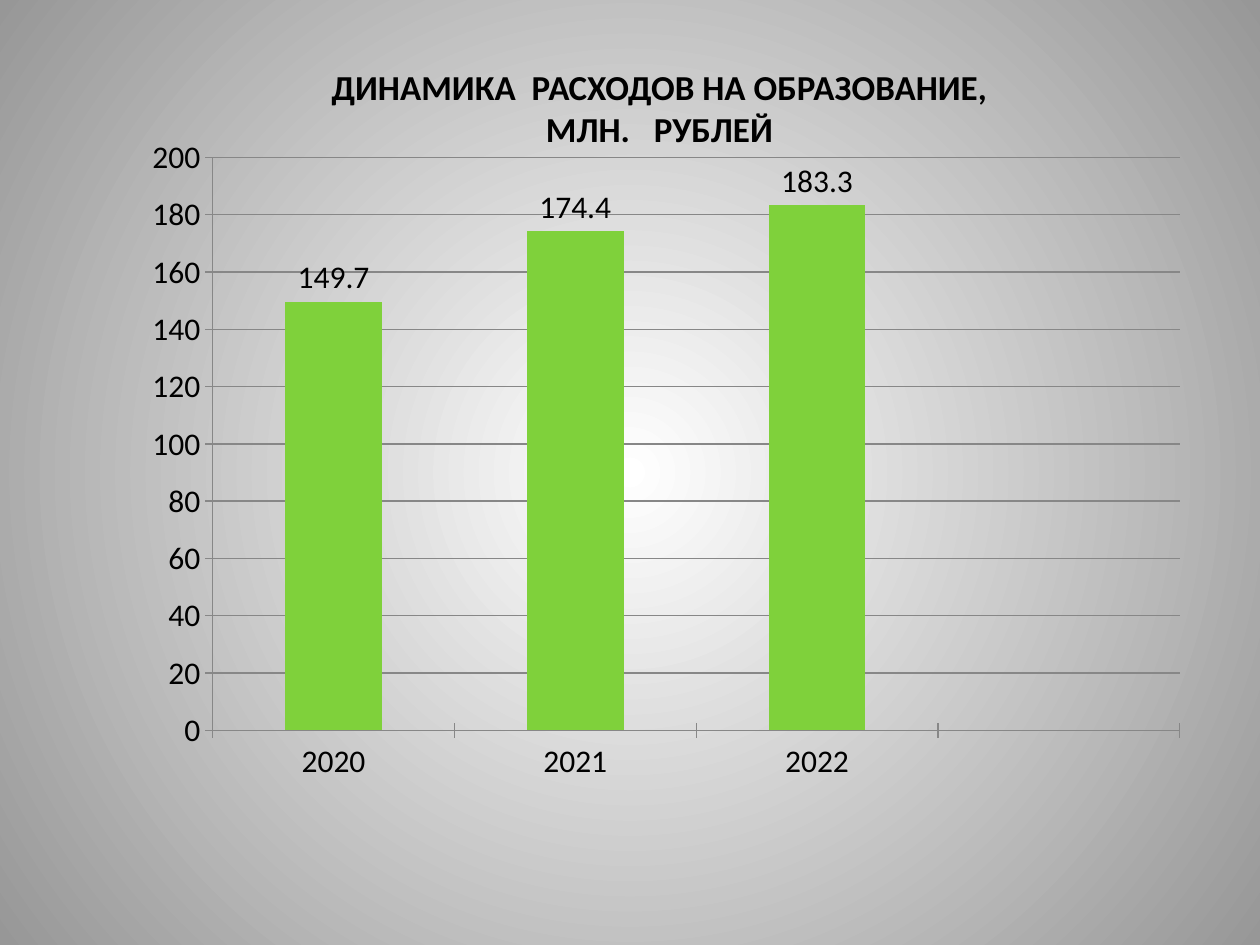
from dataclasses import dataclass

from lxml.etree import SubElement
from pptx import Presentation
from pptx.chart.data import CategoryChartData
from pptx.dml.color import RGBColor
from pptx.enum.chart import XL_CHART_TYPE, XL_LABEL_POSITION, XL_TICK_MARK
from pptx.enum.text import MSO_AUTO_SIZE, PP_ALIGN
from pptx.oxml import parse_xml
from pptx.oxml.ns import nsdecls, qn
from pptx.util import Pt

SCALE = 914400 / 126


@dataclass(frozen=True)
class Theme:
    """Colours and type sizes of the slide."""
    font: str = "Calibri"
    text: str = "000000"
    bar: str = "7FD13B"
    grid: str = "878787"
    centre: str = "FFFFFF"
    edge: str = "979797"
    title_size: int = 20
    chart_size: int = 18


THEME = Theme()


def emu(*lengths):
    """Turn px lengths into EMU."""
    return [round(n * SCALE) for n in lengths]


def apply(obj, values):
    """Set attributes of an object from a dict."""
    for name, value in values.items():
        setattr(obj, name, value)


def style_font(font, size, bold=False):
    """Give a font the theme's face and colour."""
    apply(font, {"name": THEME.font, "size": Pt(size), "bold": bold})
    font.color.rgb = RGBColor.from_string(THEME.text)


def paint_background(s):
    """Fill the slide with a circular gradient around its centre."""
    fill = s.background.fill
    fill.gradient()
    for stop, color, pos in zip(fill.gradient_stops, (THEME.centre, THEME.edge), (0, 1)):
        stop.color.rgb = RGBColor.from_string(color)
        stop.position = pos
    grad = next(s.element.iter(qn("a:gradFill")))
    for lin in grad.findall(qn("a:lin")):
        grad.remove(lin)
    circle = SubElement(grad, qn("a:path"), {"path": "circle"})
    SubElement(circle, qn("a:fillToRect"), dict.fromkeys("ltrb", "50000"))


def set_plot_layout(chart, x, y, w, h):
    """Fix the inner plot area as fractions of the chart."""
    area = next(chart.element.iter(qn("c:plotArea")))
    for old in area.findall(qn("c:layout")):
        area.remove(old)
    modes = '<c:layoutTarget val="inner"/><c:xMode val="edge"/><c:yMode val="edge"/>'
    sizes = "".join(f'<c:{k} val="{v}"/>' for k, v in zip("xywh", (x, y, w, h)))
    area.insert(0, parse_xml(
        f'<c:layout {nsdecls("c")}><c:manualLayout>{modes}{sizes}</c:manualLayout></c:layout>'))


def add_spending_chart(s, box):
    """Draw the yearly spending columns in the box."""
    data = CategoryChartData()
    data.categories = ["2020", "2021", "2022", ""]
    data.add_series("Series 1", [149.7, 174.4, 183.3, None])
    chart = s.shapes.add_chart(XL_CHART_TYPE.COLUMN_CLUSTERED, *emu(*box), data).chart
    apply(chart, {"has_legend": False, "has_title": False})
    style_font(chart.font, THEME.chart_size)
    set_plot_layout(chart, 0.136, 0.029, 0.855, 0.808)
    grid = RGBColor.from_string(THEME.grid)
    value_axis = chart.value_axis
    apply(value_axis, {"minimum_scale": 0, "maximum_scale": 200, "major_unit": 20,
                       "has_major_gridlines": True})
    for axis in (chart.category_axis, value_axis):
        axis.major_tick_mark = XL_TICK_MARK.CROSS
    for part in (chart.category_axis, value_axis, value_axis.major_gridlines):
        part.format.line.color.rgb = grid
        part.format.line.width = Pt(0.75)
    plot = chart.plots[0]
    apply(plot, {"gap_width": 150, "vary_by_categories": False, "has_data_labels": True})
    apply(plot.data_labels, {"show_value": True, "position": XL_LABEL_POSITION.OUTSIDE_END})
    style_font(plot.data_labels.font, THEME.chart_size)
    fill = plot.series[0].format.fill
    fill.solid()
    fill.fore_color.rgb = RGBColor.from_string(THEME.bar)


def add_title(s, box):
    """Write the centred two-line heading in the box."""
    tf = s.shapes.add_textbox(*emu(*box)).text_frame
    apply(tf, {"word_wrap": True, "auto_size": MSO_AUTO_SIZE.SHAPE_TO_FIT_TEXT})
    tf.text = "ДИНАМИКА  РАСХОДОВ НА ОБРАЗОВАНИЕ,\nМЛН.   РУБЛЕЙ"
    for p in tf.paragraphs:
        p.alignment = PP_ALIGN.CENTER
        style_font(p.runs[0].font, THEME.title_size, bold=True)


def main():
    """Build and save the slide."""
    prs = Presentation()
    prs.slide_width, prs.slide_height = emu(1260, 945)
    s = prs.slides.add_slide(prs.slide_layouts[6])
    paint_background(s)
    add_spending_chart(s, (59, 137, 1131, 709))
    add_title(s, (197, 59, 925, 97))
    prs.save("out.pptx")


if __name__ == "__main__":
    main()
